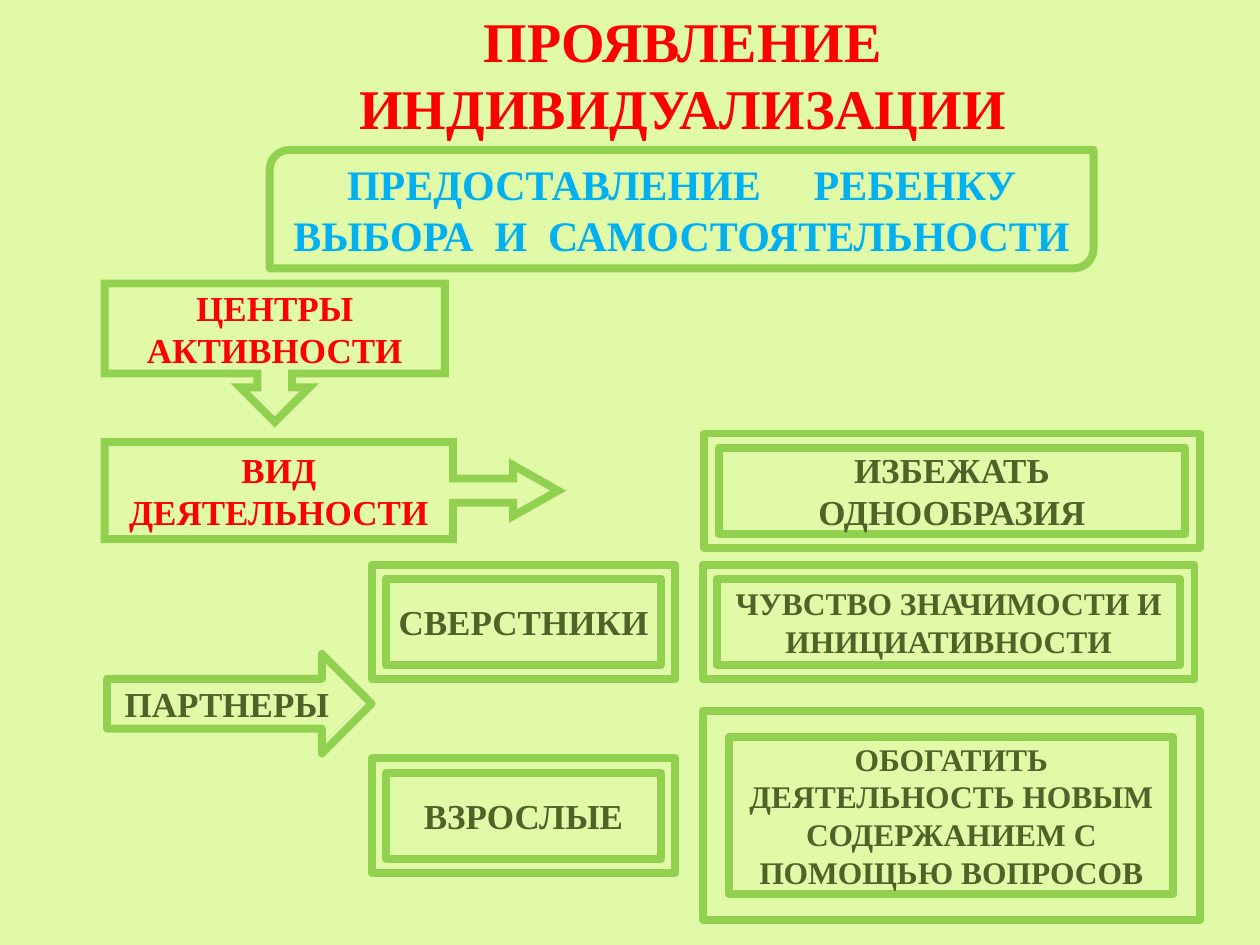
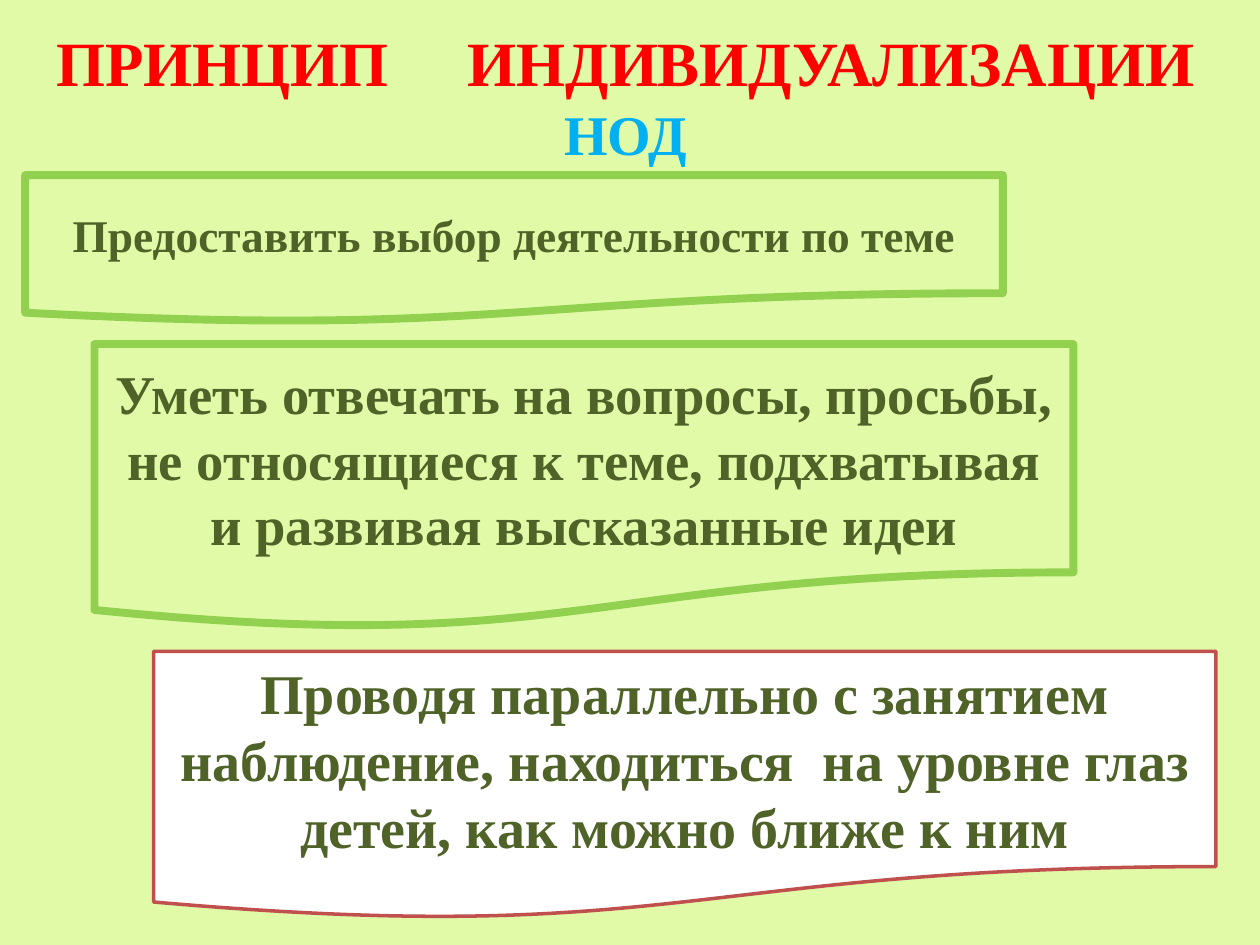
from dataclasses import dataclass

from lxml import etree
from pptx import Presentation
from pptx.dml.color import RGBColor
from pptx.enum.shapes import MSO_SHAPE
from pptx.enum.text import MSO_ANCHOR, MSO_AUTO_SIZE, PP_ALIGN
from pptx.oxml.ns import qn
from pptx.util import Pt

DOWN_CALLOUT = MSO_SHAPE.DOWN_ARROW_CALLOUT
RIGHT_CALLOUT = MSO_SHAPE.RIGHT_ARROW_CALLOUT
RIGHT_ARROW = MSO_SHAPE.RIGHT_ARROW
DIAGONAL_ROUND = MSO_SHAPE.ROUND_2_DIAG_RECTANGLE
FRAME = MSO_SHAPE.FRAME
DOCUMENT = MSO_SHAPE.FLOWCHART_DOCUMENT
TOP, MIDDLE = MSO_ANCHOR.TOP, MSO_ANCHOR.MIDDLE
CENTER = PP_ALIGN.CENTER
NO_AUTOFIT = MSO_AUTO_SIZE.NONE

FONT = "Times New Roman"
COLORS = {
    "background": "E1FAA8",
    "outline": "92D050",
    "red": "FF0000",
    "blue": "00B0F0",
    "olive": "4F6228",
    "white": "FFFFFF",
    "brick": "C0504D",
}
WIDE_GAP = "_"  # marks a space that is widened by Span.gap points

FRAME_H = 65.5
PARTNER_X, PARTNER_W = 212.4, 173.5
RESULT_X = 401.8
PEERS_Y = 322.6


@dataclass(frozen=True)
class Span:
    text: str
    size: float
    color: str = "olive"
    gap: float = 0


Lines = list[list[Span]]
Box = tuple[float, float, float, float]


@dataclass(frozen=True)
class Block:
    kind: MSO_SHAPE
    box: Box
    lines: Lines
    adjust: tuple[float, ...] = ()
    outline: str = "outline"
    weight: float = 4.5
    fill: str | None = None
    sharp: bool = False


ACTIVITY_BLOCKS = [
    Block(DIAGONAL_ROUND, (154.1, 85.7, 470.9, 67.7),
          [[Span("ПРЕДОСТАВЛЕНИЕ_РЕБЕНКУ", 24, "blue", 24)],
           [Span("ВЫБОРА_И_САМОСТОЯТЕЛЬНОСТИ", 24, "blue", 6)]]),
    Block(DOWN_CALLOUT, (59.8, 162, 194.4, 79.2),
          [[Span("ЦЕНТРЫ АКТИВНОСТИ", 20, "red")]],
          adjust=(0.25, 0.25, 0.25, 0.65), sharp=True),
    Block(RIGHT_CALLOUT, (59.8, 252.7, 259.2, 55.4),
          [[Span("ВИД ДЕЯТЕЛЬНОСТИ", 20, "red")]],
          adjust=(0.25, 0.263, 0.465, 0.768), sharp=True),
    Block(RIGHT_ARROW, (61.2, 373.7, 151.2, 56.9), [[Span("ПАРТНЕРЫ", 20)]]),
    Block(FRAME, (PARTNER_X, PEERS_Y, PARTNER_W, FRAME_H),
          [[Span("СВЕРСТНИКИ", 20)]]),
    Block(FRAME, (PARTNER_X, 433.4, PARTNER_W, FRAME_H),
          [[Span("ВЗРОСЛЫЕ", 20)]]),
    Block(FRAME, (402.5, 247.7, 283, FRAME_H),
          [[Span("ИЗБЕЖАТЬ ОДНООБРАЗИЯ", 20)]]),
    Block(FRAME, (RESULT_X, PEERS_Y, 280.8, FRAME_H),
          [[Span("ЧУВСТВО ЗНАЧИМОСТИ И ИНИЦИАТИВНОСТИ", 18)]]),
    Block(FRAME, (RESULT_X, 406.1, 283.7, 119.5),
          [[Span("ОБОГАТИТЬ ДЕЯТЕЛЬНОСТЬ НОВЫМ СОДЕРЖАНИЕМ С ПОМОЩЬЮ ВОПРОСОВ", 18)]]),
]

PRINCIPLE_BLOCKS = [
    Block(DOCUMENT, (14.4, 100.1, 558.7, 84.2),
          [[Span("Предоставить выбор деятельности по теме", 25.9)]]),
    Block(DOCUMENT, (54, 196.6, 559.4, 162.7),
          [[Span("Уметь отвечать на вопросы, просьбы, не относящиеся к теме, "
                 "подхватывая и развивая высказанные идеи", 31.2)]]),
    Block(DOCUMENT, (87.8, 372.2, 607, 153.4),
          [[Span("Проводя параллельно с занятием наблюдение, находиться_на уровне "
                 "глаз детей, как можно ближе к ним", 32, gap=8)]],
          outline="brick", weight=2, fill="white"),
]


def rgb(name: str) -> RGBColor:
    return RGBColor.from_string(COLORS[name])


def add_run(p, text: str, span: Span):
    r = p.add_run()
    r.text = text
    r.font.name = FONT
    r.font.size = Pt(span.size)
    r.font.bold = True
    r.font.color.rgb = rgb(span.color)
    return r


def write(tf, lines: Lines, anchor: MSO_ANCHOR) -> None:
    tf.word_wrap = True
    tf.auto_size = NO_AUTOFIT
    tf.vertical_anchor = anchor
    for i, spans in enumerate(lines):
        p = tf.add_paragraph() if i else tf.paragraphs[0]
        p.alignment = CENTER
        for span in spans:
            for j, part in enumerate(span.text.split(WIDE_GAP)):
                if j:
                    r = add_run(p, " ", span)
                    r._r.get_or_add_rPr().set("spc", str(int(span.gap * 100)))
                add_run(p, part, span)


def add_block(slide, block: Block) -> None:
    sp = slide.shapes.add_shape(block.kind, *map(Pt, block.box))
    sp.shadow.inherit = False
    for i, value in enumerate(block.adjust):
        sp.adjustments[i] = value
    if block.fill:
        sp.fill.solid()
        sp.fill.fore_color.rgb = rgb(block.fill)
    else:
        sp.fill.background()
    sp.line.color.rgb = rgb(block.outline)
    sp.line.width = Pt(block.weight)
    if block.sharp:
        ln = sp.line._get_or_add_ln()
        etree.SubElement(ln, qn("a:miter")).set("lim", "800000")
    write(sp.text_frame, block.lines, MIDDLE)


def add_slide(prs, box: Box, title: Lines, anchor: MSO_ANCHOR,
              blocks: list[Block]) -> None:
    slide = prs.slides.add_slide(prs.slide_layouts.get_by_name("Title Only"))
    sp = slide.shapes.title
    sp.left, sp.top, sp.width, sp.height = map(Pt, box)
    write(sp.text_frame, title, anchor)
    for block in blocks:
        add_block(slide, block)


def main() -> None:
    prs = Presentation()
    prs.slide_width, prs.slide_height = Pt(720), Pt(540)
    fill = prs.slide_master.background.fill
    fill.solid()
    fill.fore_color.rgb = rgb("background")

    add_slide(prs, (187.9, 0, 404.6, 85),
              [[Span("ПРОЯВЛЕНИЕ", 32, "red")], [Span("ИНДИВИДУАЛИЗАЦИИ", 32, "red")]],
              TOP, ACTIVITY_BLOCKS)
    add_slide(prs, (20.2, 9.4, 674.6, 90),
              [[Span("ПРИНЦИП_ИНДИВИДУАЛИЗАЦИИ ", 36, "red", 36),
                Span("НОД", 32, "blue")]],
              MIDDLE, PRINCIPLE_BLOCKS)
    prs.save("out.pptx")


if __name__ == "__main__":
    main()
